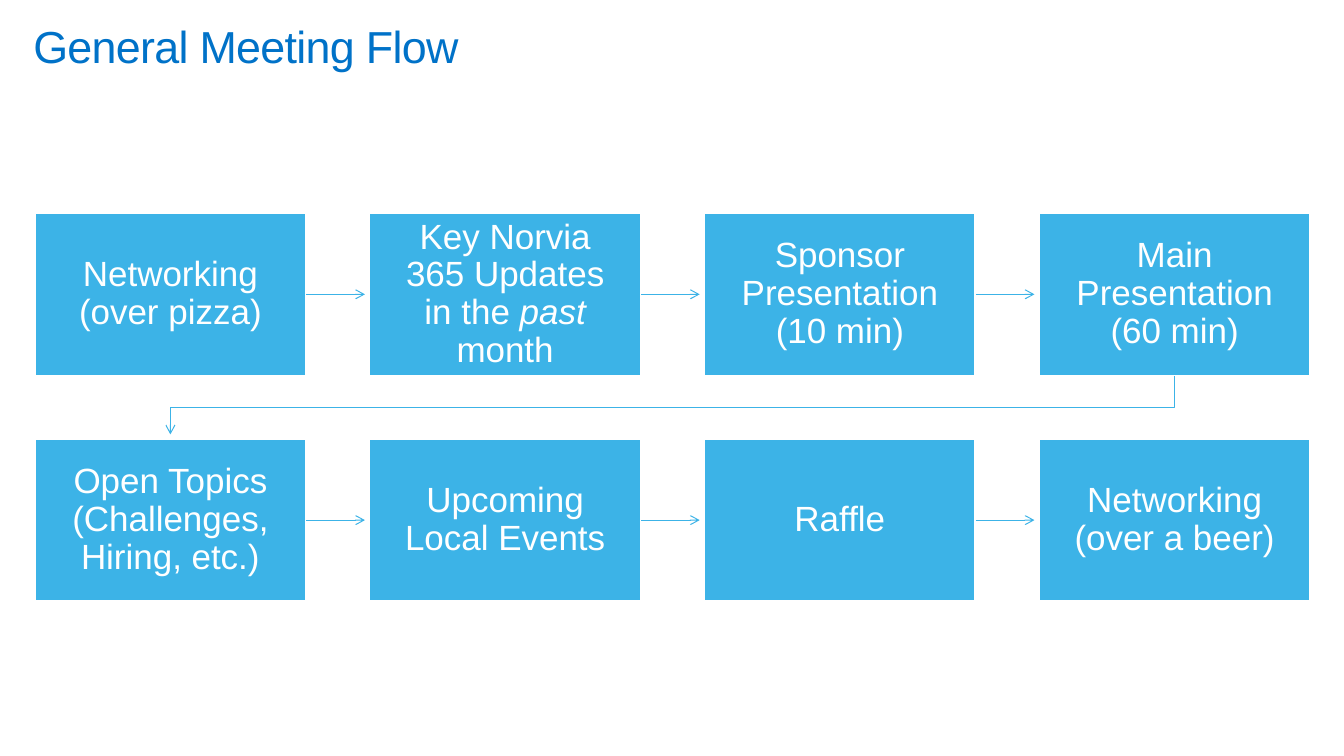
from dataclasses import dataclass

from lxml.etree import SubElement
from pptx import Presentation
from pptx.dml.color import RGBColor
from pptx.enum.shapes import MSO_CONNECTOR, MSO_SHAPE
from pptx.enum.text import MSO_ANCHOR, MSO_AUTO_SIZE, PP_ALIGN
from pptx.oxml.ns import qn
from pptx.util import Inches, Pt


@dataclass(frozen=True)
class Theme:
    font: str = "Arial"
    title_color: RGBColor = RGBColor(0x00, 0x72, 0xC8)
    step_color: RGBColor = RGBColor(0x3C, 0xB3, 0xE7)
    white: RGBColor = RGBColor(0xFF, 0xFF, 0xFF)
    title_size: Pt = Pt(32)
    step_size: Pt = Pt(25)
    arrow_width: Pt = Pt(0.75)
    border_width: Pt = Pt(2)


theme = Theme()


def format_text(text_frame, margin, anchor, alignment, size, color):
    text_frame.word_wrap = True
    text_frame.auto_size = MSO_AUTO_SIZE.NONE
    text_frame.vertical_anchor = anchor
    text_frame.margin_left = text_frame.margin_right = margin
    text_frame.margin_top = text_frame.margin_bottom = margin
    paragraph = text_frame.paragraphs[0]
    paragraph.alignment = alignment
    paragraph.line_spacing = 0.9
    for run in paragraph.runs:
        run.font.name = theme.font
        run.font.size = size
        run.font.color.rgb = color


def format_arrow(arrow):
    arrow.line.color.rgb = theme.step_color
    arrow.line.width = theme.arrow_width
    properties = arrow._element.spPr
    SubElement(properties.find(qn("a:ln")), qn("a:tailEnd"), type="arrow")
    SubElement(properties, qn("a:effectLst"))


presentation = Presentation()
presentation.slide_width = Inches(13.33)
presentation.slide_height = Inches(7.5)
slide = presentation.slides.add_slide(presentation.slide_layouts[5])

# Title
title = slide.shapes.title
title.left, title.top = Inches(0.33), Inches(0.25)
title.width, title.height = Inches(12.67), Inches(0.57)
title.text_frame.text = "General Meeting Flow"
format_text(title.text_frame, 0, MSO_ANCHOR.TOP, PP_ALIGN.LEFT,
            theme.title_size, theme.title_color)
title.text_frame.paragraphs[0].runs[0].font._element.set("spc", "-50")

# Meeting steps, row by row; each step is a list of runs and "past" is italic
step_rows = [
    [["Networking (over pizza)"],
     ["Key Norvia 365 Updates in the ", "past", " month"],
     ["Sponsor Presentation (10 min)"],
     ["Main Presentation (60 min)"]],
    [["Open Topics (Challenges, Hiring, etc.)"],
     ["Upcoming Local Events"],
     ["Raffle"],
     ["Networking (over a beer)"]],
]
first_left, first_top = Inches(0.34), Inches(2.11)
column_pitch, row_pitch = Inches(3.32), Inches(2.24)
step_width, step_height = Inches(2.7), Inches(1.62)
arrow_gap = Inches(0.04)

box_rows = []
for row, steps in enumerate(step_rows):
    boxes = []
    for column, texts in enumerate(steps):
        box = slide.shapes.add_shape(
            MSO_SHAPE.RECTANGLE,
            first_left + column * column_pitch, first_top + row * row_pitch,
            step_width, step_height)
        box.shadow.inherit = False
        box.fill.solid()
        box.fill.fore_color.rgb = theme.step_color
        box.line.color.rgb = theme.white
        box.line.width = theme.border_width
        for text in texts:
            run = box.text_frame.paragraphs[0].add_run()
            run.text = text
            run.font.italic = text == "past"
        format_text(box.text_frame, Inches(0.19), MSO_ANCHOR.MIDDLE,
                    PP_ALIGN.CENTER, theme.step_size, theme.white)
        boxes.append(box)
    box_rows.append(boxes)

# Arrows along each row, stopping just short of the next step
for boxes in box_rows:
    for box, next_box in zip(boxes, boxes[1:]):
        middle = box.top + box.height // 2
        arrow = slide.shapes.add_connector(
            MSO_CONNECTOR.STRAIGHT, box.left + box.width, middle,
            next_box.left - arrow_gap, middle)
        arrow.begin_connect(box, 3)
        format_arrow(arrow)

# Bent arrow from the end of the first row to the start of the second
last_box, next_box = box_rows[0][-1], box_rows[1][0]
start_x = last_box.left + last_box.width // 2
end_x = next_box.left + next_box.width // 2
bend_y = Inches(4.04)
builder = slide.shapes.build_freeform(start_x, last_box.top + last_box.height)
builder.add_line_segments(
    [(start_x, bend_y), (end_x, bend_y), (end_x, next_box.top - arrow_gap)],
    close=False)
row_arrow = builder.convert_to_shape()
row_arrow.fill.background()
format_arrow(row_arrow)

presentation.save("out.pptx")
